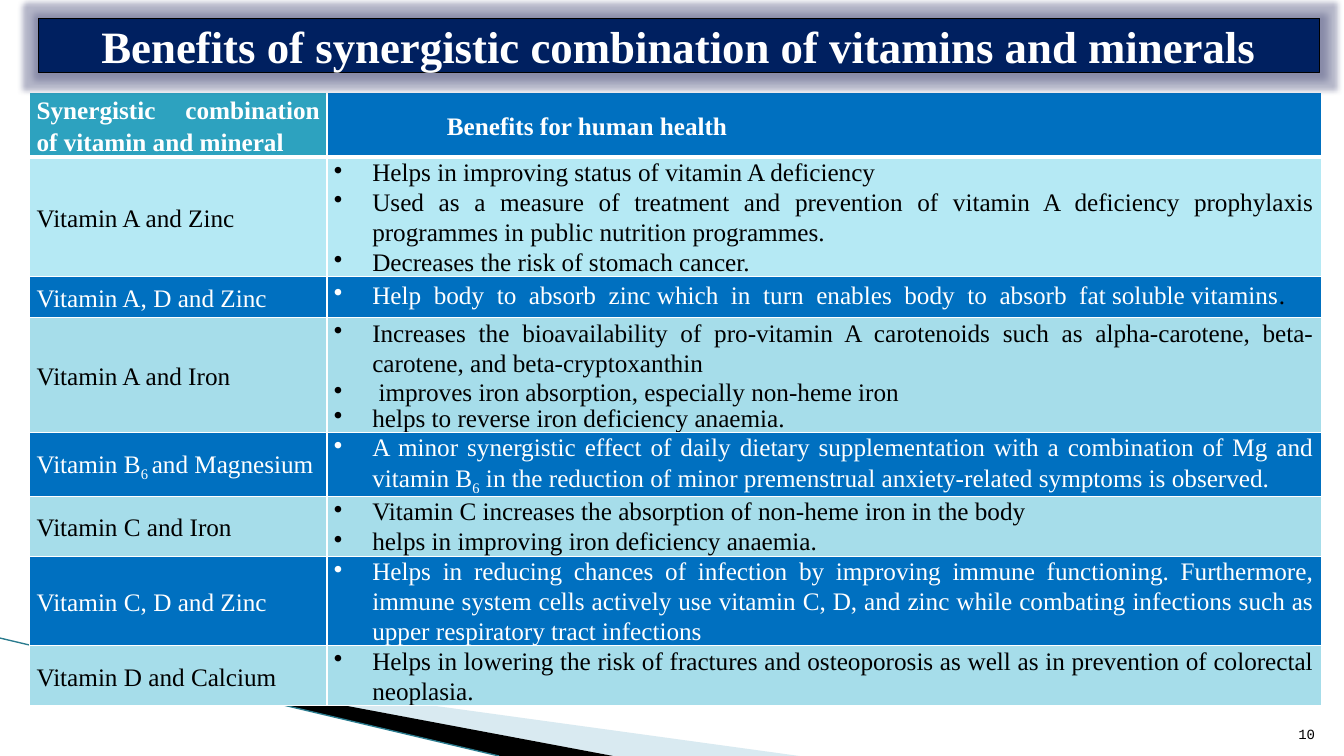
"""Build a slide with a table of vitamin and mineral combinations and their benefits."""
from dataclasses import dataclass

import pptx
import pptx.dml.color
import pptx.enum.shapes
import pptx.enum.text
import pptx.oxml
import pptx.oxml.ns
import pptx.util

COLORS = {
    "white": "FFFFFF", "black": "000000", "navy": "002060", "blue": "0070C0",
    "teal": "2DA2BF", "aqua": "B5E9F4", "pale": "A6DDEA", "mist": "A0CBDC",
    "edge": "2A7B8E", "glow": "474B78",
}
ALIGN = pptx.enum.text.PP_ALIGN
ANCHOR = pptx.enum.text.MSO_ANCHOR
SERIF = "Times New Roman"
FONTS = {
    "title": {"name": SERIF, "size": pptx.util.Pt(32), "bold": True},
    "header": {"name": SERIF, "size": pptx.util.Pt(18), "bold": True},
    "body": {"name": SERIF, "size": pptx.util.Pt(18), "bold": False},
    "number": {"name": "Courier New", "size": pptx.util.Pt(10), "bold": False},
}
NAMED = {"alignment": ALIGN.JUSTIFY, "line_spacing": 1.15}
BULLETED = {"alignment": ALIGN.JUSTIFY, "line_spacing": 1.07}
EXACT = {"alignment": ALIGN.LEFT, "line_spacing": pptx.util.Pt(18)}
CELL = {"vertical_anchor": ANCHOR.MIDDLE, "margin_left": pptx.util.Inches(0.07),
        "margin_right": pptx.util.Inches(0.07), "margin_top": 0, "margin_bottom": 0}
COLUMN_SHARES = (22.13, 73.97)
HANGING = pptx.util.Inches(0.38)
HEADER_INDENT = pptx.util.Inches(1.12)


@dataclass(frozen=True)
class Span:
    text: str
    color: str = ""
    baseline: int = 0


@dataclass(frozen=True)
class Line:
    spans: tuple[Span, ...]
    layout: dict


@dataclass(frozen=True)
class Combination:
    share: float
    fill: str
    color: str
    name: Line
    benefits: tuple[Line, ...]


@dataclass(frozen=True)
class Wedge:
    fill: str
    alpha: int
    corners: tuple[tuple[float, float], ...]


def line(*parts: str | Span, layout: dict = BULLETED) -> Line:
    return Line(tuple(Span(p) if isinstance(p, str) else p for p in parts), layout)


def name(*parts: str | Span) -> Line:
    return line(*parts, layout=NAMED)


COMBINATIONS = (
    Combination(15.87, "aqua", "black", name("Vitamin A and Zinc"), (
        line("Helps in improving status of vitamin A deficiency"),
        line("Used as a measure of treatment and prevention of vitamin A deficiency "
             "prophylaxis programmes in public nutrition programmes. "),
        line("Decreases the risk of stomach cancer."))),
    Combination(5.4, "blue", "white", name("Vitamin A, D and Zinc"), (
        line("Help  body  to  absorb  zinc which  in  turn  enables  body  to  absorb  "
             "fat soluble vitamins", Span(".", "black"), layout=EXACT),)),
    Combination(15.1, "pale", "black", name("Vitamin A and Iron"), (
        line("Increases the bioavailability of pro-vitamin A carotenoids such as "
             "alpha-carotene, beta-carotene, and beta-cryptoxanthin"),
        line(" improves iron absorption, especially non-heme iron"),
        line("helps to reverse iron deficiency anaemia.", layout=EXACT))),
    Combination(8.45, "blue", "white",
                name("Vitamin B", Span("6 ", baseline=-25), "and Magnesium"), (
        line("A minor synergistic effect of daily dietary supplementation with a "
             "combination of Mg and vitamin B", Span("6", baseline=-25),
             " in the reduction of minor premenstrual anxiety-related symptoms is observed."),)),
    Combination(7.9, "pale", "black", name("Vitamin C and Iron"), (
        line("Vitamin C increases the absorption of non-heme iron in the body "),
        line("helps in improving iron deficiency anaemia."))),
    Combination(11.75, "blue", "white", name("Vitamin C, D and Zinc"), (
        line("Helps in reducing chances of infection by improving immune functioning. "
             "Furthermore, immune system cells actively use vitamin C, D, and zinc while "
             "combating infections such as upper respiratory tract infections "),)),
    Combination(7.9, "pale", "black", name("Vitamin D and Calcium"), (
        line("Helps in lowering the risk of fractures and osteoporosis as well as in "
             "prevention of colorectal neoplasia."),)),
)
HEADER_SHARE = 8.27
WEDGES = (
    Wedge("mist", 40, ((5.48, 86.8), (59.49, 100), (45.61, 100), (5.48, 86.67))),
    Wedge("black", 100, ((5.33, 86.53), (45.61, 100), (37.21, 100), (5.4, 86.67))),
)

deck = pptx.Presentation()
deck.slide_width, deck.slide_height = pptx.util.Inches(13.33), pptx.util.Inches(7.5)
slide = deck.slides.add_slide(deck.slide_layouts[6])


def across(percent: float) -> int:
    return round(deck.slide_width * percent / 100)


def down(percent: float) -> int:
    return round(deck.slide_height * percent / 100)


def box(left: float, top: float, width: float, height: float) -> tuple[int, ...]:
    return across(left), down(top), across(width), down(height)


def rgb(color: str) -> pptx.dml.color.RGBColor:
    return pptx.dml.color.RGBColor.from_string(COLORS[color])


def assign(target: object, values: dict) -> None:
    for attribute, value in values.items():
        setattr(target, attribute, value)


def child(parent, tag: str, **attributes: str):
    element = pptx.oxml.parse_xml(f"<a:{tag} {pptx.oxml.ns.nsdecls('a')}/>")
    for key, value in attributes.items():
        element.set(key, value)
    parent.append(element)
    return element


def paint(target, color: str) -> None:
    target.fill.solid()
    target.fill.fore_color.rgb = rgb(color)


def write(frame, lines: tuple[Line, ...], font: str, color: str, bulleted: bool = False) -> None:
    for index, content in enumerate(lines):
        paragraph = frame.add_paragraph() if index else frame.paragraphs[0]
        if bulleted:
            properties = paragraph._p.get_or_add_pPr()
            properties.set("marL", str(HANGING))
            properties.set("indent", str(-HANGING))
            child(properties, "buChar", char="•")
        assign(paragraph, content.layout)
        for span in content.spans:
            run = paragraph.add_run()
            run.text = span.text
            assign(run.font, FONTS[font])
            run.font.color.rgb = rgb(span.color or color)
            if span.baseline:
                run._r.get_or_add_rPr().set("baseline", str(span.baseline * 1000))


def draw_cell(cell, lines: tuple[Line, ...], fill: str, color: str, font: str,
              bulleted: bool, top: int, bottom: int) -> None:
    assign(cell, CELL)
    write(cell.text_frame, lines, font, color, bulleted)
    properties = cell._tc.get_or_add_tcPr()
    for side, points in (("L", 1), ("R", 1), ("T", top), ("B", bottom)):
        border = child(properties, f"ln{side}", w=str(pptx.util.Pt(points)))
        child(child(border, "solidFill"), "srgbClr", val=COLORS["white"])
    paint(cell, fill)


def draw_wedge(wedge: Wedge) -> None:
    corners = [(across(x), down(y)) for x, y in wedge.corners]
    builder = slide.shapes.build_freeform(*corners[0], scale=1.0)
    builder.add_line_segments(corners[1:], close=True)
    shape = builder.convert_to_shape()
    shape.shadow.inherit = False
    paint(shape, wedge.fill)
    shape.line.fill.background()
    tint = shape._element.spPr.find(".//" + pptx.oxml.ns.qn("a:srgbClr"))
    child(tint, "alpha", val=str(wedge.alpha * 1000))


def draw_edge() -> None:
    edge = slide.shapes.add_connector(pptx.enum.shapes.MSO_CONNECTOR.STRAIGHT,
                                      0, down(84.4), across(37.13), down(100))
    edge.line.color.rgb = rgb("edge")
    edge.line.width = pptx.util.Pt(0.95)
    child(edge._element.spPr, "effectLst")


def draw_benefits() -> None:
    shares = (HEADER_SHARE, *(c.share for c in COMBINATIONS))
    table = slide.shapes.add_table(len(shares), len(COLUMN_SHARES),
                                   *box(2.2, 12.27, sum(COLUMN_SHARES), sum(shares))).table
    table.horz_banding = False
    for column, share in zip(table.columns, COLUMN_SHARES):
        column.width = across(share)
    for row, share in zip(table.rows, shares):
        row.height = down(share)
    headings = (("Synergistic combination of vitamin and mineral", "teal"),
                ("Benefits for human health", "blue"))
    for column, (heading, fill) in enumerate(headings):
        draw_cell(table.cell(0, column), (name(heading),), fill, "white", "header", False, 1, 3)
    table.cell(0, 1).text_frame.paragraphs[0]._p.get_or_add_pPr().set("indent", str(HEADER_INDENT))
    for row, item in enumerate(COMBINATIONS, start=1):
        for column, lines in enumerate(((item.name,), item.benefits)):
            draw_cell(table.cell(row, column), lines, item.fill, item.color, "body",
                      column == 1, 3 if row == 1 else 1, 1)


def draw_title() -> None:
    banner = slide.shapes.add_shape(pptx.enum.shapes.MSO_SHAPE.RECTANGLE,
                                    *box(2.85, 2.4, 95.35, 7.2))
    paint(banner, "navy")
    banner.line.color.rgb = rgb("black")
    banner.line.width = pptx.util.Pt(0.75)
    banner.shadow.inherit = False
    effects = banner._element.spPr.find(pptx.oxml.ns.qn("a:effectLst"))
    halo = child(child(effects, "glow", rad=str(pptx.util.Pt(8))), "srgbClr", val=COLORS["glow"])
    child(halo, "alpha", val="40000")
    assign(banner.text_frame, {"word_wrap": True, "vertical_anchor": ANCHOR.MIDDLE})
    heading = line("Benefits of synergistic combination of vitamins and minerals",
                   layout={"alignment": ALIGN.CENTER})
    write(banner.text_frame, (heading,), "title", "white")


def draw_number() -> None:
    number = slide.shapes.add_textbox(*box(94.6, 93.47, 3.98, 5.33)).text_frame
    assign(number, {"word_wrap": True, "vertical_anchor": ANCHOR.BOTTOM})
    write(number, (line("10", layout={"alignment": ALIGN.RIGHT}),), "number", "black")


for wedge in WEDGES:
    draw_wedge(wedge)
draw_edge()
draw_benefits()
draw_number()
draw_title()
deck.save("out.pptx")
